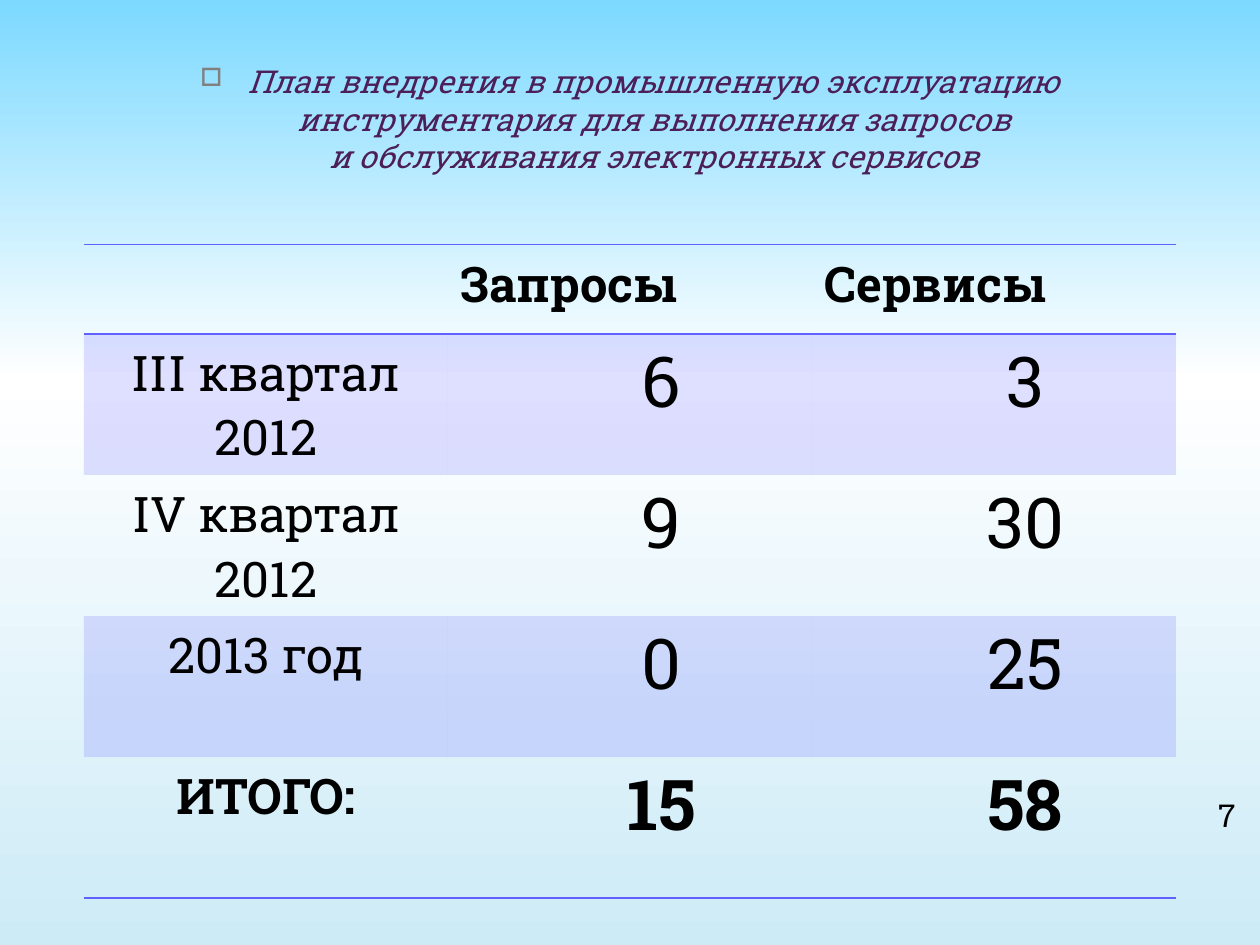
from copy import deepcopy
from dataclasses import dataclass

from lxml import etree
from pptx import Presentation
from pptx.dml.color import RGBColor
from pptx.enum.text import MSO_ANCHOR, MSO_AUTO_SIZE, PP_ALIGN
from pptx.oxml.ns import qn
from pptx.util import Inches, Pt

LEFT, MID = PP_ALIGN.LEFT, PP_ALIGN.CENTER
TOP = MSO_ANCHOR.TOP
GROW = MSO_AUTO_SIZE.SHAPE_TO_FIT_TEXT
FACE = "Roboto Slab"
BLACK, PLUM, GREY, BLUE = "000000", "4C1F58", "808080", "6161FF"
STOPS = [(0, "CDEBF7"), (60, "FFFFFF"), (100, "7CD9FF")]
PLAIN = "{2D5ABB26-0587-4C30-8999-92F81FD0307C}"
WIDE, HIGH = Inches(10), Inches(7.5)


@dataclass
class Row:
    cells: tuple
    high: float = 1.12
    bold: bool = False
    tint: bool = False
    edges: tuple = ()


ROWS = [
    Row(("", "Запросы", "Сервисы"), 0.71, bold=True, edges=("lnT", "lnB")),
    Row(("III квартал 2012", "6", "3"), tint=True),
    Row(("IV квартал 2012", "9", "30")),
    Row(("2013 год", "0", "25"), tint=True),
    Row(("ИТОГО:", "15", "58"), bold=True, edges=("lnB",)),
]
HEAD = ("План внедрения в промышленную эксплуатацию",
        "инструментария для выполнения запросов",
        "и обслуживания электронных сервисов")


def tone(code: str) -> RGBColor:
    return RGBColor.from_string(code)


def apply(item, **vals) -> None:
    for name, val in vals.items():
        setattr(item, name, val)


def node(up, tag: str, **vals):
    return etree.SubElement(up, qn(tag), **vals)


def write(para, text: str, size: float, code: str = BLACK, **vals) -> None:
    run = para.add_run()
    run.text = text
    apply(run.font, name=FACE, size=Pt(size), **vals)
    run.font.color.rgb = tone(code)


def paint(slide) -> None:
    fill = slide.background.fill
    fill.gradient()
    fill.gradient_angle = 90
    stops = next(slide.element.iter(qn("a:gsLst")))
    stops.clear()
    for place, code in STOPS:
        stop = node(stops, "a:gs", pos=str(place * 1000))
        node(stop, "a:srgbClr", val=code)


def title(slide) -> None:
    shape = slide.shapes.title
    apply(shape, left=0, top=Inches(0.44), width=WIDE, height=Inches(1.01))
    frame = shape.text_frame
    apply(frame, word_wrap=True, auto_size=GROW, vertical_anchor=TOP)
    para = frame.paragraphs[0]
    apply(para, alignment=MID, space_before=Pt(15))
    props = para._p.get_or_add_pPr()
    props.set("marL", str(Inches(0.38)))
    props.set("indent", str(-Inches(0.38)))
    node(node(props, "a:buClr"), "a:srgbClr", val=GREY)
    node(props, "a:buSzPct", val="80000")
    node(props, "a:buChar", char="□")
    for step, line in enumerate(HEAD):
        if step:
            para.add_line_break()
        write(para, line, 18, PLUM, italic=True)
    style = para.runs[0].font._element
    for gap in para._p.findall(qn("a:br")):
        gap.append(deepcopy(style))


def edge(cell, tags: tuple) -> None:
    props = cell._tc.get_or_add_tcPr()
    for spot, tag in enumerate(tags):
        line = etree.Element(qn(f"a:{tag}"), w=str(Pt(1)))
        node(node(line, "a:solidFill"), "a:srgbClr", val=BLUE)
        props.insert(spot, line)


def shade(cell, tint: bool) -> None:
    if not tint:
        cell.fill.background()
        return
    cell.fill.solid()
    cell.fill.fore_color.rgb = tone(BLUE)
    hue = next(cell._tc.tcPr.iter(qn("a:srgbClr")))
    node(hue, "a:alpha", val="20000")


def plan(slide) -> None:
    cols = len(ROWS[0].cells)
    tall = Inches(sum(row.high for row in ROWS))
    shape = slide.shapes.add_table(len(ROWS), cols, WIDE // 15, Inches(1.94),
                                   WIDE * 13 // 15, tall)
    table = shape.table
    apply(table, first_row=False, horz_banding=False)
    table._tbl.tblPr.find(qn("a:tableStyleId")).text = PLAIN
    for y, row in enumerate(ROWS):
        table.rows[y].height = Inches(row.high)
        for x, text in enumerate(row.cells):
            cell = table.cell(y, x)
            shade(cell, row.tint)
            edge(cell, row.edges)
            para = cell.text_frame.paragraphs[0]
            para.alignment = MID if y else LEFT
            count = y > 0 and x > 0
            if count:
                apply(cell, margin_left=Inches(0.07), margin_top=0,
                      margin_right=Inches(0.07), margin_bottom=0)
                apply(para, space_before=Pt(6), space_after=Pt(2))
                para._p.get_or_add_pPr().set("indent", str(Inches(0.5)))
            if text:
                write(para, text, 40 if count else 28, bold=row.bold)


def page(slide) -> None:
    box = slide.shapes.add_textbox(Inches(9.57), Inches(6.27),
                                   Inches(0.47), Inches(0.23))
    apply(box.text_frame, word_wrap=True, vertical_anchor=TOP)
    write(box.text_frame.paragraphs[0], "7", 18)


def main() -> None:
    deck = Presentation()
    apply(deck, slide_width=WIDE, slide_height=HIGH)
    slide = deck.slides.add_slide(deck.slide_layouts[5])
    for draw in (paint, page, title, plan):
        draw(slide)
    deck.save("out.pptx")


if __name__ == "__main__":
    main()
